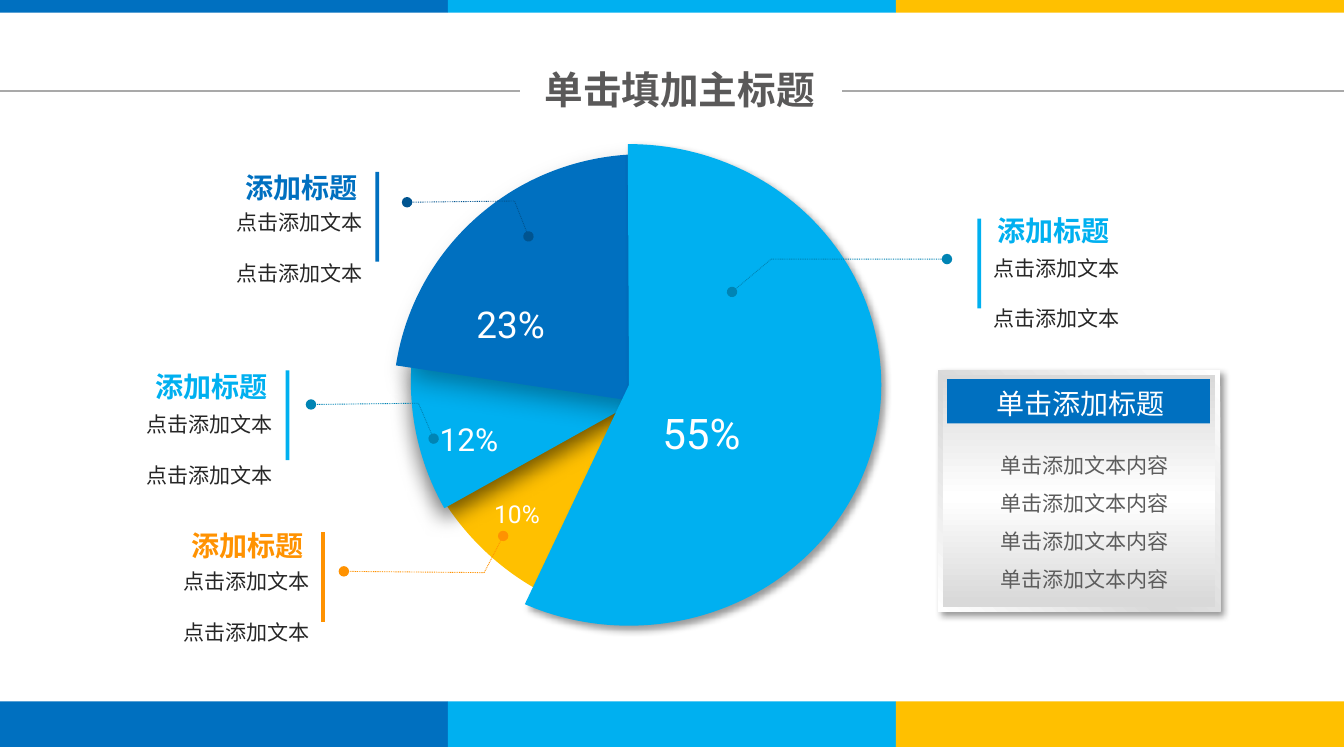
"""Build a slide with an exploded pie diagram, four callouts and a text panel."""
import copy

import lxml.etree
import pptx
import pptx.dml.color
import pptx.enum.dml
import pptx.enum.shapes
import pptx.enum.text
import pptx.oxml.ns
import pptx.util

Inches = pptx.util.Inches
Pt = pptx.util.Pt
RGB = pptx.dml.color.RGBColor.from_string
qn = pptx.oxml.ns.qn
SubElement = lxml.etree.SubElement
Kind = pptx.enum.shapes.MSO_SHAPE
Align = pptx.enum.text.PP_ALIGN
Anchor = pptx.enum.text.MSO_ANCHOR

COLORS = {
    "blue": "0070C0", "sky": "00B0F0", "gold": "FFC000", "orange": "FF9201",
    "navy": "005490", "teal": "0084B4", "white": "FFFFFF", "black": "000000",
    "silver": "D9D9D9", "rule": "A9A9A9", "title": "5A5959",
    "body": "262626", "panel": "5C5C5C",
}
CJK = "Noto Sans CJK SC"

deck = pptx.Presentation()
deck.slide_width, deck.slide_height = Inches(10.63), Inches(5.91)
page = deck.slides.add_slide(deck.slide_layouts[5])


def write(text, place, size, color, box=None, font=CJK, bold=False, align=Align.LEFT,
          spacing=1.0, gap=0, inset=(0.1, 0.05), anchor=Anchor.TOP, wrap=True):
    left, top, width, height = (Inches(value) for value in place)
    box = box or page.shapes.add_textbox(left, top, width, height)
    box.left, box.top, box.width, box.height = left, top, width, height
    frame = box.text_frame
    frame.word_wrap = wrap
    frame.auto_size = pptx.enum.text.MSO_AUTO_SIZE.NONE
    frame.vertical_anchor = anchor
    frame.margin_left = frame.margin_right = Inches(inset[0])
    frame.margin_top = frame.margin_bottom = Inches(inset[1])
    for index, line in enumerate(text.split("\n")):
        para = frame.add_paragraph() if index else frame.paragraphs[0]
        para.alignment, para.line_spacing = align, spacing
        para.space_before = Pt(gap if index else 0)
        span = para.add_run()
        span.text = line
        span.font.name, span.font.size, span.font.bold = font, Pt(size), bold
        span.font.color.rgb = RGB(COLORS[color])
        SubElement(span.font._element, qn("a:ea"), typeface=CJK)


def draw(kind, place, fill, shadow=None, stops=(), angle=0):
    shape = page.shapes.add_shape(kind, *(Inches(value) for value in place))
    shape.line.fill.background()
    shape.shadow.inherit = False
    if stops:
        shape.fill.gradient()
        shape.fill.gradient_angle = 360 - angle
        stop_list = shape._element.spPr.find(".//" + qn("a:gsLst"))
        stop_list.append(copy.deepcopy(stop_list[0]))
        for stop, (position, name) in zip(shape.fill.gradient_stops, stops):
            stop.position = position
            stop.color.rgb = RGB(COLORS[name])
    else:
        shape.fill.solid()
        shape.fill.fore_color.rgb = RGB(COLORS[fill])
    if shadow:
        opacity, blur, distance, direction = shadow
        effects = shape._element.spPr.find(qn("a:effectLst"))
        outer = SubElement(effects, qn("a:outerShdw"), blurRad=str(Pt(blur)),
                           dist=str(Pt(distance)), dir=str(direction * 60000),
                           algn="ctr", rotWithShape="0")
        tint = SubElement(outer, qn("a:srgbClr"), val=COLORS["black"])
        SubElement(tint, qn("a:alpha"), val=str(opacity * 1000))
    return shape


band = 10.63 / 3
for top, height in ((0, 0.1), (5.55, 0.37)):
    for column, name in enumerate(("blue", "sky", "gold")):
        draw(Kind.RECTANGLE, (column * band, top, band, height), name)

write("单击填加主标题", (3.75, 0.47, 3.25, 0.47), 22, "title", box=page.shapes.title,
      font="Arial", bold=True, align=Align.CENTER, inset=(0, 0), anchor=Anchor.MIDDLE)
for start, end in ((0, 4.11), (6.66, 10.63)):
    rule = page.shapes.add_connector(pptx.enum.shapes.MSO_CONNECTOR.STRAIGHT,
                                     Inches(start), Inches(0.72), Inches(end), Inches(0.72))
    rule.line.width = Pt(1)
    rule.line.color.rgb = RGB(COLORS["rule"])
    SubElement(rule._element.spPr, qn("a:effectLst"))

slices = (
    ((3.17, 0.67, 4.12, 4.25), (96.23, 147.37), "gold", None),
    ((3.25, 0.98, 4.12, 4.08), (150.86, 185.48), "sky", (54, 12, 6, 90)),
    ((3.11, 1.22, 3.96, 3.93), (188.53, 270.57), "blue", (35, 16, 9, 45)),
    ((2.98, 1.14, 3.99, 3.81), (269.71, 115.4), "sky", (40, 4, 3, 45)),
)
for place, degrees, name, shadow in slices:
    wedge = draw(Kind.PIE, place, name, shadow)
    for index, degree in enumerate(degrees):
        wedge.adjustments[index] = degree * 60000 / 100000

for text, place, size in (
    ("55%", (5.14, 3.17, 1.41, 0.5), 24),
    ("23%", (3.67, 2.34, 0.92, 0.45), 21),
    ("12%", (3.38, 3.27, 0.86, 0.42), 18),
    ("10%", (3.81, 3.9, 0.72, 0.35), 14),
):
    write(text, place, size, "white", font="Roboto")

callouts = (
    ("sky", "teal", (7.73, 1.73), (7.79, 1.64), (7.76, 1.97),
     ((5.79, 2.31), (6.1, 2.05), (7.49, 2.05))),
    ("orange", "orange", (2.54, 4.21), (1.42, 4.13), (1.35, 4.45),
     ((3.98, 4.24), (3.83, 4.53), (2.72, 4.52))),
    ("blue", "navy", (2.97, 1.36), (1.84, 1.3), (1.77, 1.61),
     ((4.18, 1.87), (4.07, 1.59), (3.22, 1.6))),
    ("sky", "teal", (2.26, 2.93), (1.13, 2.87), (1.06, 3.21),
     ((3.43, 3.47), (3.31, 3.19), (2.46, 3.2))),
)
for name, leader_color, bar, heading, body, points in callouts:
    corners = [(Inches(x), Inches(y)) for x, y in points]
    builder = page.shapes.build_freeform(*corners[0])
    builder.add_line_segments(corners[1:], close=False)
    leader = builder.convert_to_shape()
    leader.fill.background()
    leader.shadow.inherit = False
    leader.line.width = Pt(0.5)
    leader.line.color.rgb = RGB(COLORS[leader_color])
    leader.line.dash_style = pptx.enum.dml.MSO_LINE.ROUND_DOT
    outline = leader._element.spPr.find(qn("a:ln"))
    for end in ("a:headEnd", "a:tailEnd"):
        SubElement(outline, qn(end), type="oval")
    draw(Kind.RECTANGLE, (*bar, 0.03, 0.71), name)
    write("点击添加文本\n点击添加文本", (*body, 1.25, 0.51), 12, "body", gap=14.4)
    write("添加标题", (*heading, 1.22, 0.37), 16, name, bold=True)

draw(Kind.RECTANGLE, (7.42, 2.93, 2.23, 1.91), None, (40, 4, 3, 45),
     stops=((0, "white"), (0.57, "silver"), (1, "white")), angle=135)
draw(Kind.RECTANGLE, (7.46, 2.97, 2.15, 1.83), None,
     stops=((0.02, "silver"), (0.47, "white"), (1, "silver")), angle=270)
draw(Kind.RECTANGLE, (7.49, 3, 2.08, 0.35), "blue")
write("单击添加标题", (7.76, 3, 1.58, 0.38), 16, "white", align=Align.CENTER,
      inset=(0, 0), anchor=Anchor.MIDDLE, wrap=False)
write("\n".join(["单击添加文本内容"] * 4), (7.67, 3.43, 1.82, 1.31), 12, "panel",
      align=Align.CENTER, spacing=1.5)

deck.save("out.pptx")
